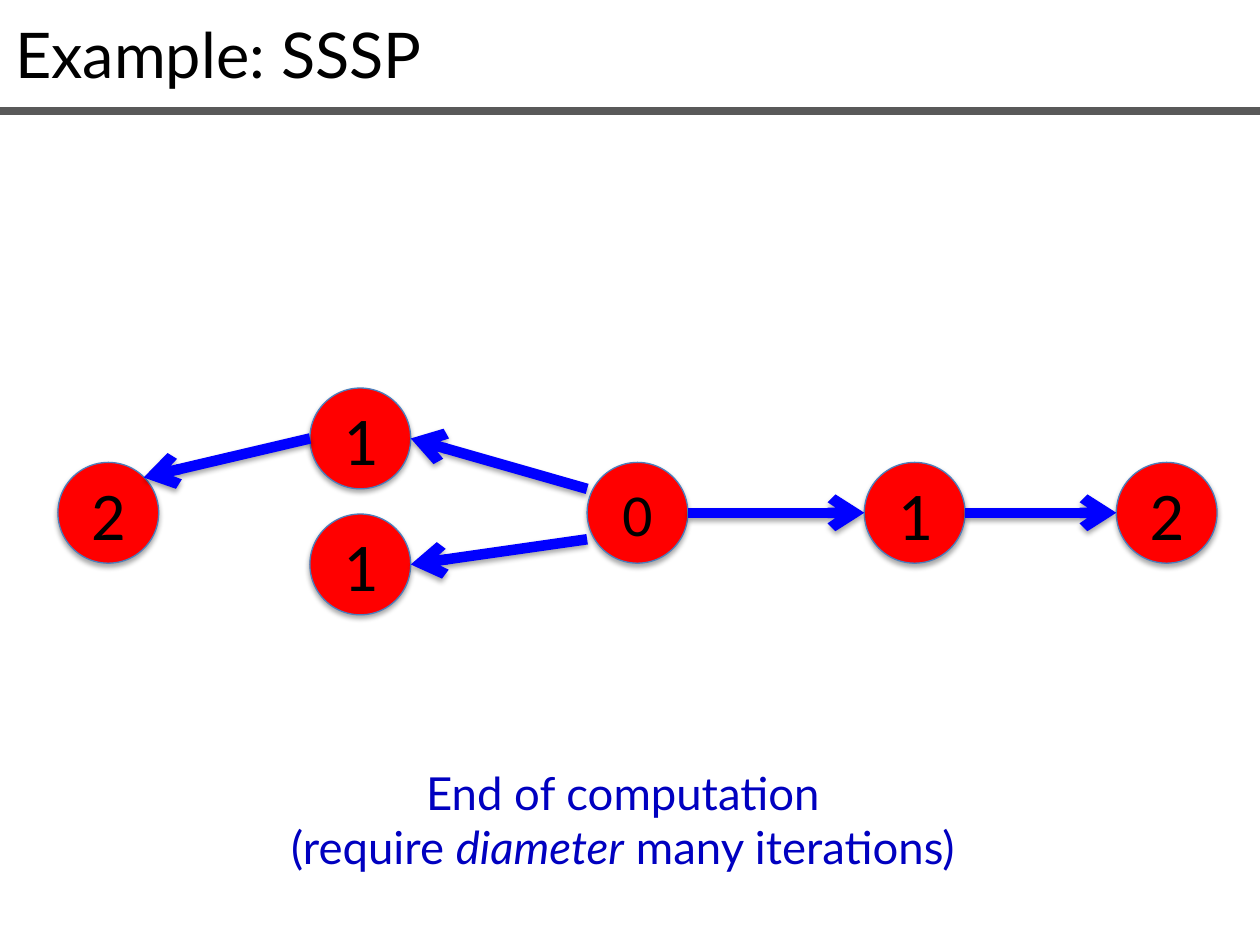
from pptx import Presentation
from pptx import util as u
from pptx.dml.color import RGBColor
from pptx.enum import shapes, text
from pptx.oxml import parse_xml
from pptx.oxml.ns import nsdecls

TITLE = "Example: SSSP"
CAPTION = [
    [("End of computation", False)],
    [("(require ", False), ("diameter", True), (" many iterations)", False)],
]
DIAMETER = 0.8
NODES = [
    ("0", 4.66, 3.67, 34),
    ("1", 2.46, 3.08, 39),
    ("2", 0.46, 3.67, 39),
    ("1", 6.86, 3.67, 39),
    ("2", 8.86, 3.67, 39),
    ("1", 2.46, 4.08, 39),
]
EDGES = [
    ((4.66, 4.28), (3.26, 4.48)),
    ((4.66, 3.88), (3.26, 3.48)),
    ((5.46, 4.07), (6.86, 4.07)),
    ((7.66, 4.07), (8.86, 4.07)),
    ((2.46, 3.48), (1.14, 3.79)),
]
NODE_FONT = {"name": "Calibri"}
TITLE_FONT = {"name": "Lato", "size": u.Pt(36)}
CAPTION_FONT = {"name": "Lato", "size": u.Pt(26)}
SHADOW = (
    '<a:outerShdw blurRad="39370" dist="22860" dir="5400000" rotWithShape="0">'
    '<a:srgbClr val="000000"><a:alpha val="35000"/></a:srgbClr></a:outerShdw>'
)


def color(target, value):
    target.rgb = RGBColor.from_string(value)


def style(font, values, value):
    for name, setting in values.items():
        setattr(font, name, setting)
    color(font.color, value)


def outline(line, value, width):
    line.fill.solid()
    color(line.fill.fore_color, value)
    line.width = u.Pt(width)


def add_effect(part, effect=""):
    part._element.spPr.append(
        parse_xml(f"<a:effectLst {nsdecls('a')}>{effect}</a:effectLst>")
    )


def add_node(slide, label, left, top, size):
    node = slide.shapes.add_shape(
        shapes.MSO_SHAPE.OVAL, *map(u.Inches, (left, top, DIAMETER, DIAMETER))
    )
    node.fill.solid()
    color(node.fill.fore_color, "FF0000")
    outline(node.line, "4B7EBC", 0.75)
    add_effect(node, SHADOW)
    node.text_frame.vertical_anchor = text.MSO_ANCHOR.MIDDLE
    paragraph = node.text_frame.paragraphs[0]
    paragraph.alignment = text.PP_ALIGN.CENTER
    run = paragraph.add_run()
    run.text = label
    style(run.font, {**NODE_FONT, "size": u.Pt(size)}, "000000")


def add_line(slide, start, end, value, width):
    line = slide.shapes.add_connector(
        shapes.MSO_CONNECTOR.STRAIGHT, *map(u.Inches, start + end)
    )
    outline(line.line, value, width)
    return line


def add_edge(slide, start, end):
    edge = add_line(slide, start, end, "0000FF", 6)
    edge.line._get_or_add_ln().append(
        parse_xml(f'<a:tailEnd {nsdecls("a")} type="arrow"/>')
    )
    add_effect(edge, SHADOW)


def add_title(slide):
    title = slide.shapes.title
    place = {"left": 0.02, "top": 0.07, "width": 9.44, "height": 0.71}
    for name, length in place.items():
        setattr(title, name, u.Inches(length))
    frame = title.text_frame
    frame.text = TITLE
    frame.vertical_anchor = text.MSO_ANCHOR.TOP
    frame.auto_size = text.MSO_AUTO_SIZE.NONE
    frame.paragraphs[0].alignment = text.PP_ALIGN.LEFT
    style(frame.paragraphs[0].runs[0].font, TITLE_FONT, "000000")


def add_caption(slide):
    frame = slide.shapes.add_textbox(
        *map(u.Inches, (1.54, 6.02, 6.81, 0.98))
    ).text_frame
    frame.word_wrap = True
    for index, pieces in enumerate(CAPTION):
        paragraph = frame.add_paragraph() if index else frame.paragraphs[0]
        paragraph.alignment = text.PP_ALIGN.CENTER
        for words, italic in pieces:
            run = paragraph.add_run()
            run.text = words
            style(run.font, {**CAPTION_FONT, "italic": italic}, "0000C0")


def main():
    deck = Presentation()
    deck.slide_width, deck.slide_height = u.Inches(10), u.Inches(7.5)
    slide = deck.slides.add_slide(deck.slide_layouts.get_by_name("Title Only"))
    for node in NODES:
        add_node(slide, *node)
    for edge in EDGES:
        add_edge(slide, *edge)
    add_title(slide)
    add_effect(add_line(slide, (0, 0.88), (10, 0.88), "595959", 4.5))
    add_caption(slide)
    deck.save("out.pptx")


if __name__ == "__main__":
    main()
